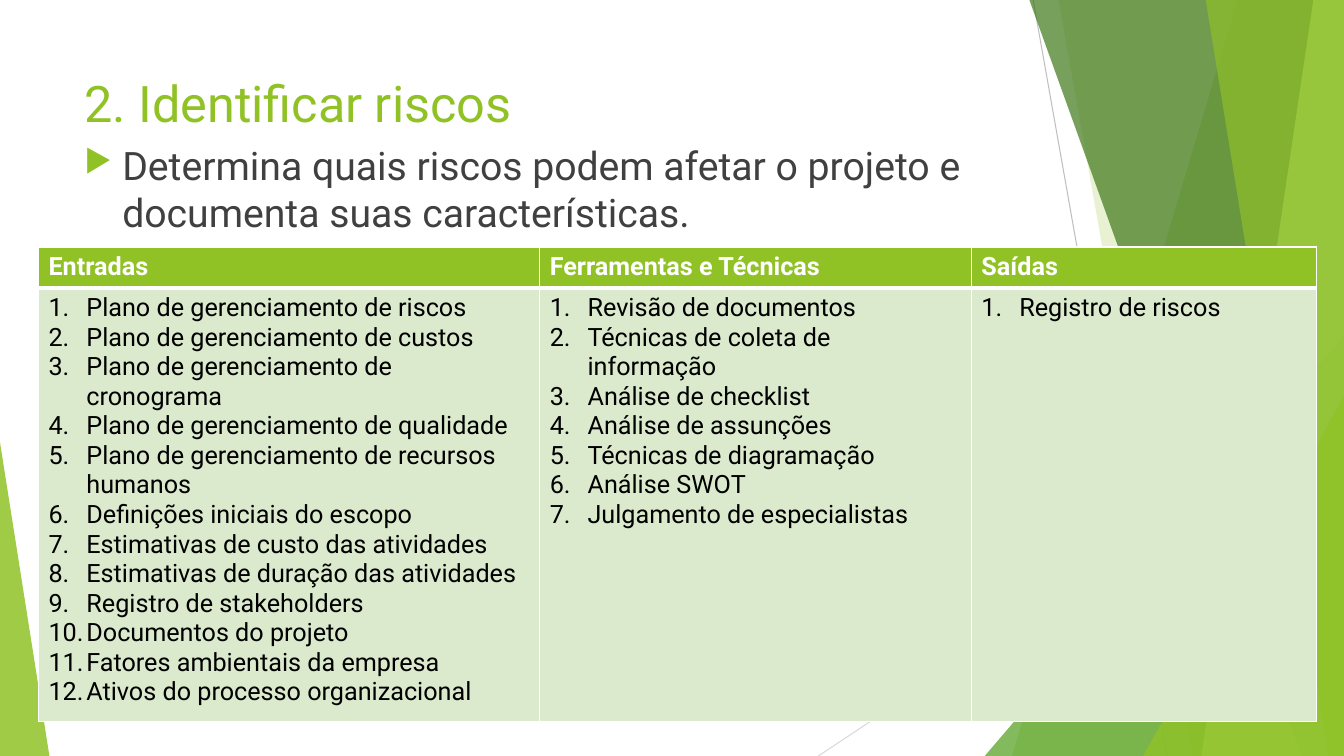
from dataclasses import dataclass

from lxml.etree import SubElement
from pptx import Presentation
from pptx.dml.color import RGBColor
from pptx.enum.shapes import MSO_CONNECTOR as Connector, MSO_SHAPE as Preset
from pptx.oxml.ns import qn
from pptx.util import Pt


@dataclass(frozen=True)
class Theme:
    font: str = "Roboto"
    green: str = "90C226"
    leaf: str = "54A021"
    forest: str = "3F7819"
    lime: str = "C0E474"
    pale: str = "DBE9CD"
    white: str = "FFFFFF"
    black: str = "000000"
    body: str = "404040"
    gray: str = "BFBFBF"
    light_gray: str = "D9D9D9"
    title_size: int = 36
    body_size: int = 28
    table_size: int = 18
    indent: float = 27


THEME = Theme()
WIDTH, HEIGHT, TOP = 960, 540, -0.6


@dataclass(frozen=True)
class Ray:
    start: tuple[float, float]
    end: tuple[float, float]
    color: str


@dataclass(frozen=True)
class Band:
    top_left: float
    bottom_left: float
    color: str
    opacity: int


@dataclass(frozen=True)
class Corner:
    left: float
    top: float
    width: float
    apex: float
    color: str
    opacity: int


@dataclass(frozen=True)
class Column:
    heading: str
    width: float
    items: tuple[str, ...]


@dataclass(frozen=True)
class Bullet:
    tag: str
    attributes: dict[str, str]
    color: str | None = None
    percent: int = 100


ARROW = Bullet("a:buChar", {"char": "▶"}, THEME.green, 80)
NUMBER = Bullet("a:buAutoNum", {"type": "arabicPeriod"})

DECORATION = (
    Ray((738, 0), (833.8, HEIGHT), THEME.gray),
    Ray((WIDTH, 290), (584.6, HEIGHT), THEME.light_gray),
    Band(884.2, 722.9, THEME.green, 30),
    Band(756, 851.8, THEME.green, 20),
    Corner(703.4, 240, 256.6, 1, THEME.leaf, 72),
    Band(735.1, 929.5, THEME.forest, 70),
    Band(938.2, 858.2, THEME.lime, 70),
    Band(861.1, 949, THEME.green, 65),
    Corner(816.5, 283, 143.5, 1, THEME.green, 80),
    Corner(0, 316, 35.3, 0, THEME.green, 85),
)

COLUMNS = (
    Column("Entradas", 358, (
        "Plano de gerenciamento de riscos",
        "Plano de gerenciamento de custos",
        "Plano de gerenciamento de cronograma",
        "Plano de gerenciamento de qualidade",
        "Plano de gerenciamento de recursos humanos",
        "Definições iniciais do escopo",
        "Estimativas de custo das atividades",
        "Estimativas de duração das atividades",
        "Registro de stakeholders",
        "Documentos do projeto",
        "Fatores ambientais da empresa",
        "Ativos do processo organizacional",
    )),
    Column("Ferramentas e Técnicas", 308.4, (
        "Revisão de documentos",
        "Técnicas de coleta de informação",
        "Análise de checklist",
        "Análise de assunções",
        "Técnicas de diagramação",
        "Análise SWOT",
        "Julgamento de especialistas",
    )),
    Column("Saídas", 246.4, ("Registro de riscos",)),
)


def paint(shape, color: str, opacity: int) -> None:
    shape.shadow.inherit = False
    shape.fill.solid()
    shape.fill.fore_color.rgb = RGBColor.from_string(color)
    shape.line.fill.background()
    rgb = shape.fill._xPr.find(qn("a:solidFill"))[0]
    SubElement(rgb, qn("a:alpha"), val=str(opacity * 1000))


def draw_ray(slide, ray: Ray) -> None:
    points = [Pt(value) for value in (*ray.start, *ray.end)]
    connector = slide.shapes.add_connector(Connector.STRAIGHT, *points)
    connector.line.color.rgb = RGBColor.from_string(ray.color)
    connector.line.width = Pt(0.75)
    SubElement(connector._element.spPr, qn("a:effectLst"))


def draw_band(slide, band: Band) -> None:
    builder = slide.shapes.build_freeform(Pt(band.top_left), Pt(TOP))
    corners = ((WIDTH, TOP), (WIDTH, HEIGHT), (band.bottom_left, HEIGHT))
    builder.add_line_segments([(Pt(x), Pt(y)) for x, y in corners])
    paint(builder.convert_to_shape(), band.color, band.opacity)


def draw_corner(slide, corner: Corner) -> None:
    shape = slide.shapes.add_shape(
        Preset.ISOSCELES_TRIANGLE, Pt(corner.left), Pt(corner.top),
        Pt(corner.width), Pt(HEIGHT - corner.top))
    shape.adjustments[0] = corner.apex
    paint(shape, corner.color, corner.opacity)


def add_bullet(paragraph, bullet: Bullet) -> None:
    properties = paragraph._p.get_or_add_pPr()
    properties.set("marL", str(Pt(THEME.indent)))
    properties.set("indent", str(-Pt(THEME.indent)))
    if bullet.color:
        color = SubElement(properties, qn("a:buClr"))
        SubElement(color, qn("a:srgbClr"), val=bullet.color)
        SubElement(properties, qn("a:buSzPct"), val=str(bullet.percent * 1000))
    SubElement(properties, qn(bullet.tag), bullet.attributes)


def write(frame, *lines: str, size: int, color: str, bold: bool = False,
          bullet: Bullet | None = None) -> None:
    frame.word_wrap = True
    for index, line in enumerate(lines):
        paragraph = frame.add_paragraph() if index else frame.paragraphs[0]
        if bullet:
            add_bullet(paragraph, bullet)
        run = paragraph.add_run()
        run.text = line
        run.font.name = THEME.font
        run.font.size = Pt(size)
        run.font.bold = bold
        run.font.color.rgb = RGBColor.from_string(color)


def add_text(slide, text: str, top: float, height: float, **style) -> None:
    box = slide.shapes.add_textbox(Pt(53.3), Pt(top), Pt(676.8), Pt(height))
    write(box.text_frame, text, **style)


def format_cell(cell, fill: str, bottom: float) -> None:
    properties = cell._tc.get_or_add_tcPr()
    for side, width in (("L", 1), ("R", 1), ("T", 1), ("B", bottom)):
        border = SubElement(properties, qn(f"a:ln{side}"), w=str(Pt(width)))
        solid = SubElement(border, qn("a:solidFill"))
        SubElement(solid, qn("a:srgbClr"), val=THEME.white)
    cell.fill.solid()
    cell.fill.fore_color.rgb = RGBColor.from_string(fill)


def add_process_table(slide) -> None:
    total = sum(column.width for column in COLUMNS)
    table = slide.shapes.add_table(
        2, len(COLUMNS), Pt(27.5), Pt(176.4), Pt(total), Pt(339)).table
    table.horz_banding = False
    table.rows[0].height, table.rows[1].height = Pt(29.4), Pt(309.6)
    for index, column in enumerate(COLUMNS):
        table.columns[index].width = Pt(column.width)
        heading, body = table.cell(0, index), table.cell(1, index)
        format_cell(heading, THEME.green, 3)
        write(heading.text_frame, column.heading, size=THEME.table_size,
              color=THEME.white, bold=True)
        format_cell(body, THEME.pale, 1)
        write(body.text_frame, *column.items, size=THEME.table_size,
              color=THEME.black, bullet=NUMBER)


def main() -> None:
    presentation = Presentation()
    presentation.slide_width, presentation.slide_height = Pt(WIDTH), Pt(HEIGHT)
    slide = presentation.slides.add_slide(presentation.slide_layouts[6])
    painters = {Ray: draw_ray, Band: draw_band, Corner: draw_corner}
    for piece in DECORATION:
        painters[type(piece)](slide, piece)
    add_text(slide, "2. Identificar riscos", 48.2, 103.7,
             size=THEME.title_size, color=THEME.green)
    add_text(slide, "Determina quais riscos podem afetar o projeto e documenta "
             "suas características.", 97.2, 305.3,
             size=THEME.body_size, color=THEME.body, bullet=ARROW)
    add_process_table(slide)
    presentation.save("out.pptx")


if __name__ == "__main__":
    main()
